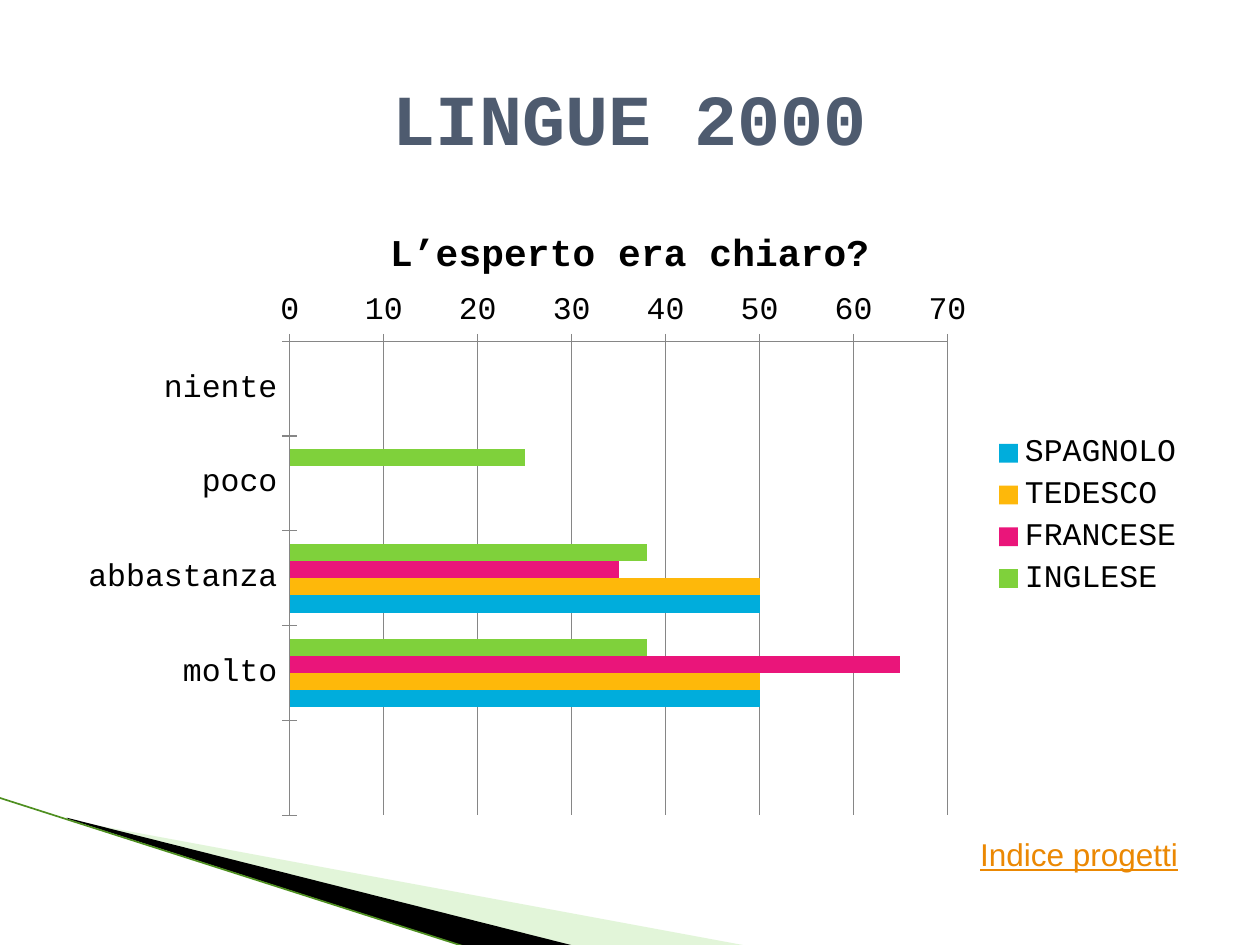
from lxml import etree
from pptx import Presentation
from pptx import util as u
from pptx.chart.data import CategoryChartData
from pptx.dml.color import RGBColor
from pptx.enum import chart as charts, shapes, text
from pptx.oxml import parse_xml
from pptx.oxml.ns import nsdecls, qn

COLORS = {
    "title": "4E5B6F", "link": "EB8803", "text": "000000", "grid": "868686",
    "pale": "B8E7A1", "black": "000000", "edge": "4E8F20",
    "INGLESE": "7FD13B", "FRANCESE": "EA157A",
    "TEDESCO": "FEB80A", "SPAGNOLO": "00ADDC",
}
MONO = "Courier New"
ANSWERS = ["niente", "poco", "abbastanza", "molto", ""]
RATINGS = {
    "INGLESE": [None, 25, 38, 38, None],
    "FRANCESE": [None, None, 35, 65, None],
    "TEDESCO": [None, None, 50, 50, None],
    "SPAGNOLO": [None, None, 50, 50, None],
}
PLOT_AREA = {"x": 0.2, "y": 0.22, "w": 0.58, "h": 0.76}


def rgb(name):
    return RGBColor.from_string(COLORS[name])


class SlideBuilder:
    def __init__(self, slide):
        self.slide = slide

    def style(self, font, size, color, name=MONO, bold=False, underline=False):
        font.name, font.size = name, u.Pt(size)
        font.bold, font.underline = bold, underline
        font.color.rgb = rgb(color)

    def wedge(self, points, color, opacity=100):
        corners = [(u.Inches(x), u.Inches(y)) for x, y in points]
        outline = self.slide.shapes.build_freeform(*corners[0])
        outline.add_line_segments(corners[1:], close=True)
        wedge = outline.convert_to_shape()
        wedge.shadow.inherit = False
        wedge.fill.solid()
        wedge.fill.fore_color.rgb = rgb(color)
        wedge.line.fill.background()
        if opacity < 100:
            tint = wedge.element.spPr.find(qn("a:solidFill"))[0]
            etree.SubElement(tint, qn("a:alpha"), val=str(opacity * 1000))

    def line(self, start, end, color, width):
        edge = self.slide.shapes.add_connector(
            shapes.MSO_CONNECTOR.STRAIGHT, *map(u.Inches, start + end))
        edge.line.color.rgb = rgb(color)
        edge.line.width = u.Pt(width)
        etree.SubElement(edge.element.spPr, qn("a:effectLst"))

    def label(self, words, box, align, anchor, **look):
        frame = self.slide.shapes.add_textbox(*map(u.Inches, box)).text_frame
        frame.word_wrap = True
        frame.vertical_anchor = anchor
        paragraph = frame.paragraphs[0]
        paragraph.text = words
        paragraph.alignment = align
        self.style(paragraph.font, **look)

    def bar_chart(self, heading, categories, ratings, box):
        data = CategoryChartData()
        data.categories = categories
        for language, values in ratings.items():
            data.add_series(language, values)
        chart = self.slide.shapes.add_chart(
            charts.XL_CHART_TYPE.BAR_CLUSTERED, *map(u.Inches, box), data).chart
        self.style(chart.font, 18, "text")

        chart.has_title = True
        title = chart.chart_title.text_frame.paragraphs[0]
        title.text = heading
        self.style(title.font, 21.6, "text", bold=True)

        chart.has_legend = True
        chart.legend.position = charts.XL_LEGEND_POSITION.RIGHT
        chart.legend.include_in_layout = False

        bars = chart.plots[0]
        bars.vary_by_categories = False
        bars.gap_width, bars.overlap = 150, 0
        for series in bars.series:
            series.format.fill.solid()
            series.format.fill.fore_color.rgb = rgb(series.name)

        answers, scale = chart.category_axis, chart.value_axis
        answers.reverse_order = True
        scale.minimum_scale, scale.maximum_scale, scale.major_unit = 0, 70, 10
        scale.has_major_gridlines = True
        for rule in (answers, scale, scale.major_gridlines):
            rule.format.line.color.rgb = rgb("grid")
            rule.format.line.width = u.Pt(0.75)
        for axis in (answers, scale):
            axis.major_tick_mark = charts.XL_TICK_MARK.CROSS
        self.place_plot(chart)

    def place_plot(self, chart):
        plot = chart.element.find(".//" + qn("c:plotArea"))
        for layout in plot.findall(qn("c:layout")):
            plot.remove(layout)
        modes = "".join(f'<c:{side}Mode val="edge"/>' for side in "xy")
        sizes = "".join(f'<c:{key} val="{value}"/>' for key, value in PLOT_AREA.items())
        plot.insert(0, parse_xml(
            f'<c:layout {nsdecls("c")}><c:manualLayout><c:layoutTarget val="inner"/>'
            f"{modes}{sizes}</c:manualLayout></c:layout>"))


def main():
    deck = Presentation()
    deck.slide_width, deck.slide_height = u.Inches(10), u.Inches(7.5)
    builder = SlideBuilder(deck.slides.add_slide(deck.slide_layouts[6]))

    builder.wedge([(0.55, 6.51), (5.95, 7.51), (4.56, 7.51), (0.55, 6.5)], "pale", 40)
    builder.wedge([(0.53, 6.49), (4.57, 7.51), (3.72, 7.52), (0.54, 6.5)], "black")
    builder.line((-0.01, 6.33), (3.71, 7.52), "edge", 0.95)
    builder.bar_chart("L’esperto era chiaro?", ANSWERS, RATINGS, (0.5, 1.62, 9, 4.95))
    builder.label("LINGUE 2000", (0.5, 0.3, 9, 1.25), text.PP_ALIGN.CENTER,
                  text.MSO_ANCHOR.MIDDLE, size=41, color="title", bold=True)
    builder.label("Indice progetti", (7.68, 6.58, 1.89, 0.4), text.PP_ALIGN.LEFT,
                  text.MSO_ANCHOR.TOP, size=18, color="link", name="Arial", underline=True)
    deck.save("out.pptx")


if __name__ == "__main__":
    main()
